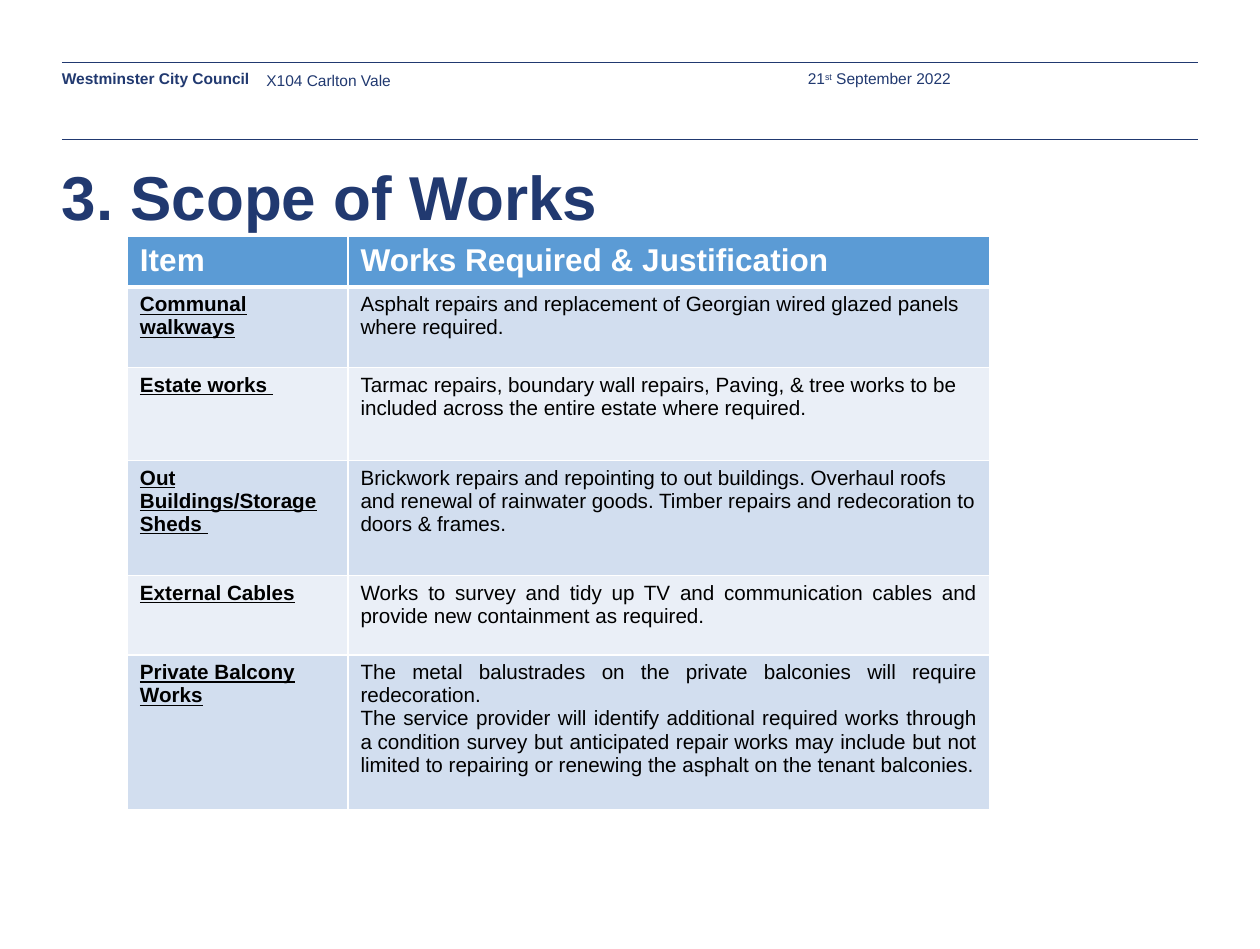
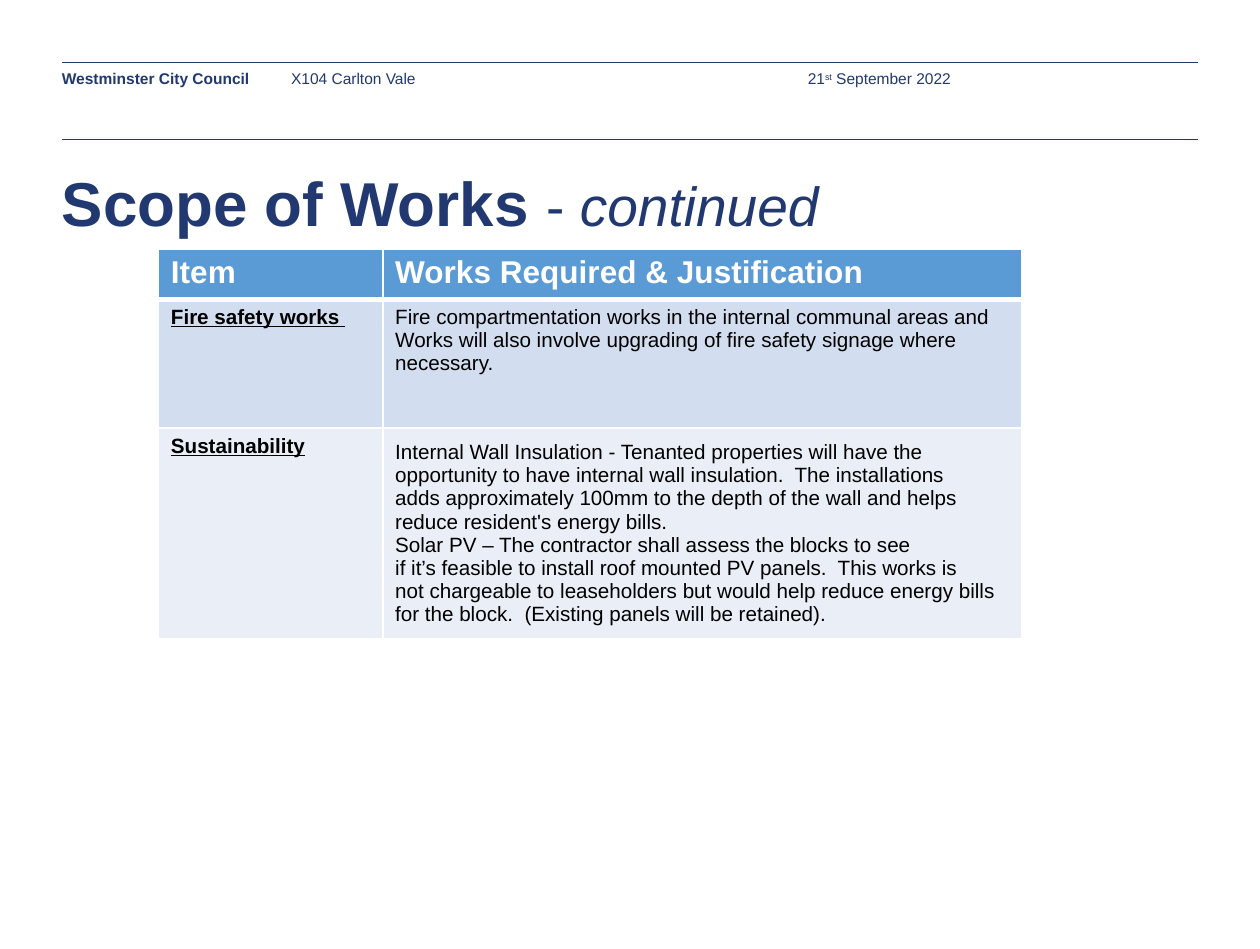
from lxml import etree
from pptx import Presentation
from pptx.dml.color import RGBColor
from pptx.enum.shapes import MSO_CONNECTOR
from pptx.enum.text import MSO_ANCHOR, MSO_AUTO_SIZE, PP_ALIGN
from pptx.oxml import parse_xml
from pptx.oxml.ns import nsdecls, qn
from pptx.util import Inches, Pt

FONT = "Arial"
NAVY = "213970"
WHITE = "FFFFFF"
BLACK = "000000"
HEADER_BLUE = "5B9BD5"
BANDS = ("D2DEEF", "EAEFF7")
TITLE_ONLY = 5


def color(value):
    return RGBColor.from_string(value)


def tie(text):
    """Turn each ~ into a no-break space, which keeps its words on one line."""
    return text.replace("~", chr(160))


def style_font(font, size, value, bold=False, italic=None, underline=None):
    font.name = FONT
    font.size = Pt(size)
    font.color.rgb = color(value)
    font.bold = bold
    font.italic = italic
    font.underline = underline


def set_cell_borders(cell, bottom=1):
    """Draw white borders of 1 point, with a bottom of the given width."""
    properties = cell._tc.get_or_add_tcPr()
    widths = {"lnL": 1, "lnR": 1, "lnT": 1, "lnB": bottom}
    for position, (side, width) in enumerate(widths.items()):
        properties.insert(position, parse_xml(
            f'<a:{side} {nsdecls("a")} w="{Pt(width)}"><a:solidFill>'
            f'<a:srgbClr val="{WHITE}"/></a:solidFill></a:{side}>'))


class ScopeDeck:
    def __init__(self):
        self.deck = Presentation()
        self.deck.slide_width = Inches(10.17)
        self.deck.slide_height = Inches(7.66)
        self.page = None

    def add_page(self, title_top, title_spans, project_left, project_top):
        layout = self.deck.slide_layouts[TITLE_ONLY]
        self.page = self.deck.slides.add_slide(layout)
        for top in (0.5, 1.12):
            self.add_rule(top)
        self.add_title(title_top, title_spans)

        client = self.add_label(0.5, 0.56, 1.53, 0.15,
                                ["Westminster City Council"], bold=True)
        client.text_frame.word_wrap = False
        client.text_frame.auto_size = MSO_AUTO_SIZE.SHAPE_TO_FIT_TEXT

        date = self.add_label(6.52, 0.56, 2.29, 0.15, ["21", "st", " September 2022"])
        date.text_frame.vertical_anchor = MSO_ANCHOR.MIDDLE
        ordinal = date.text_frame.paragraphs[0].runs[1]
        ordinal._r.get_or_add_rPr().set("baseline", "30000")

        self.add_label(project_left, project_top, 3.57, 0.41, ["X104 Carlton Vale"])

    def add_rule(self, top):
        rule = self.page.shapes.add_connector(
            MSO_CONNECTOR.STRAIGHT, Inches(0.5), Inches(top), Inches(9.67), Inches(top))
        rule.line.color.rgb = color(NAVY)
        rule.line.width = Pt(0.25)
        etree.SubElement(rule._element.spPr, qn("a:effectLst"))

    def add_title(self, top, spans):
        """Fill the title with (text, size, bold, italic) spans."""
        title = self.page.shapes.title
        title.left, title.top = Inches(0.5), Inches(top)
        title.width, title.height = Inches(9.17), Inches(0.82)
        frame = title.text_frame
        frame.auto_size = MSO_AUTO_SIZE.NONE
        frame.vertical_anchor = MSO_ANCHOR.TOP
        frame.margin_left = frame.margin_right = 0
        frame.margin_top = frame.margin_bottom = 0
        paragraph = frame.paragraphs[0]
        paragraph.alignment = PP_ALIGN.LEFT
        for text, size, bold, italic in spans:
            span = paragraph.add_run()
            span.text = text
            style_font(span.font, size, NAVY, bold, italic)

    def add_label(self, left, top, width, height, spans, bold=False):
        box = self.page.shapes.add_textbox(
            Inches(left), Inches(top), Inches(width), Inches(height))
        frame = box.text_frame
        frame.word_wrap = True
        frame.margin_left = frame.margin_right = 0
        frame.margin_top = frame.margin_bottom = 0
        paragraph = frame.paragraphs[0]
        for text in spans:
            paragraph.add_run().text = text
        style_font(paragraph.font, 9, NAVY, bold)
        return box

    def add_works_table(self, left, top, widths, heights, works):
        """Add a header row and one banded row for each (item, paragraphs)."""
        table = self.page.shapes.add_table(
            len(heights), len(widths), Inches(left), Inches(top),
            Inches(sum(widths)), Inches(sum(heights))).table
        for column, width in zip(table.columns, widths):
            column.width = Inches(width)
        for row, height in zip(table.rows, heights):
            row.height = Inches(height)

        for cell, text in zip(table.rows[0].cells, ("Item", "Works Required & Justification")):
            self.fill_cell(cell, [text], HEADER_BLUE, 18.3, WHITE, bold=True)
            set_cell_borders(cell, bottom=3)

        for number, (item, paragraphs) in enumerate(works, start=1):
            band = BANDS[(number - 1) % 2]
            item_cell, works_cell = table.rows[number].cells
            self.fill_cell(item_cell, [item], band, 12, BLACK, bold=True, underline=True)
            self.fill_cell(works_cell, paragraphs, band, 12, BLACK)
            for cell in (item_cell, works_cell):
                set_cell_borders(cell)
        return table

    def fill_cell(self, cell, paragraphs, fill, size, value, **style):
        cell.fill.solid()
        cell.fill.fore_color.rgb = color(fill)
        cell.text = tie("\n".join(paragraphs))
        for paragraph in cell.text_frame.paragraphs:
            style_font(paragraph.font, size, value, **style)

    def save(self):
        self.deck.save("out.pptx")


def add_scope_page(scope):
    scope.add_page(1.28, [("3. Scope of Works", 36, True, None)], 2.15, 0.57)
    works = [
        ("Communal walkways",
         ["Asphalt repairs and replacement of Georgian wired glazed panels where required."]),
        ("Estate works~",
         ["Tarmac repairs, boundary wall repairs, Paving, & tree works to be included "
          "across the entire estate where required."]),
        ("Out Buildings/Storage Sheds~",
         ["Brickwork repairs and repointing to out buildings.~Overhaul roofs and renewal "
          "of rainwater goods. Timber repairs and redecoration to doors & frames."]),
        ("External Cables",
         ["Works to survey and tidy up TV and communication cables and provide~new "
          "containment as required."]),
        ("Private Balcony Works",
         ["The metal balustrades on the private balconies will require redecoration.",
          "The service provider will identify additional required works through "
          "a~condition survey but anticipated repair~works may include but not limited "
          "to repairing or renewing the asphalt~on the tenant balconies."]),
    ]
    table = scope.add_works_table(
        1.03, 1.91, (1.78, 5.18), (0.3, 0.65, 0.75, 0.93, 0.64, 1.25), works)
    for row in (4, 5):
        for paragraph in table.cell(row, 1).text_frame.paragraphs:
            paragraph.alignment = PP_ALIGN.JUSTIFY


def add_continued_page(scope):
    title = [("Scope of Works ", 36, True, None),
             ("- ", 32, False, None),
             ("continued", 32, False, True)]
    scope.add_page(1.33, title, 2.35, 0.56)
    works = [
        ("Fire safety works~",
         ["Fire compartmentation works in the internal communal areas and Works will "
          "also involve upgrading of fire safety signage where necessary."]),
        ("Sustainability",
         ["Internal Wall Insulation - Tenanted properties will have the opportunity "
          "to~have internal wall insulation.~ The installations adds~approximately 100mm "
          "to the depth of the wall and helps reduce~resident's~energy bills.",
          "Solar PV – The contractor shall assess the blocks to see if~it’s~feasible "
          "to~install roof mounted PV panels.~ This works~is not~chargeable "
          "to~leaseholders but would help reduce energy bills for the block.~ "
          "(Existing panels will be retained)."]),
    ]
    table = scope.add_works_table(1.28, 2.01, (1.81, 5.16), (0.3, 1.04, 1.5), works)
    table.cell(2, 1).vertical_anchor = MSO_ANCHOR.MIDDLE


def main():
    scope = ScopeDeck()
    add_scope_page(scope)
    add_continued_page(scope)
    scope.save()


if __name__ == "__main__":
    main()
